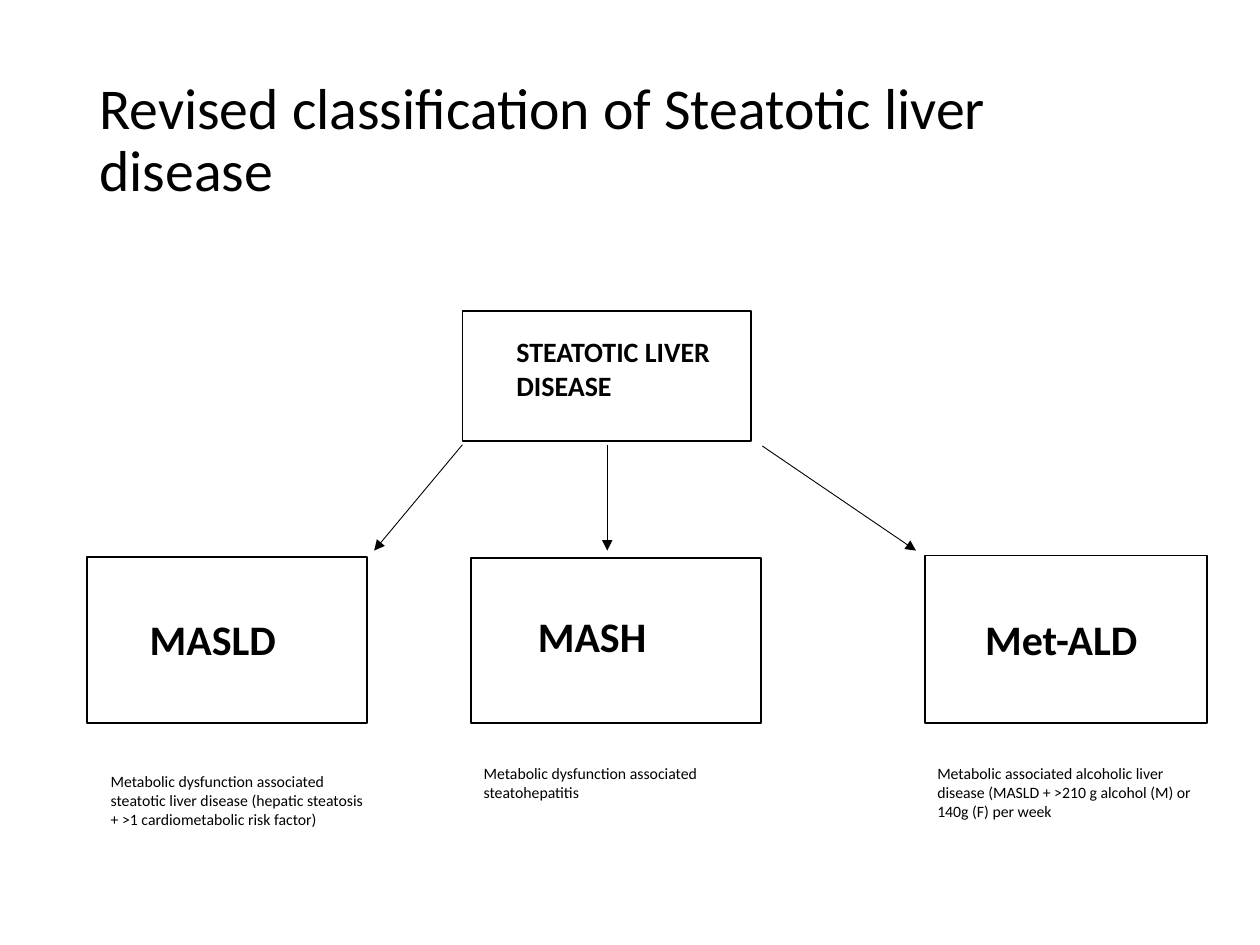
import pptx
import pptx.util
import pptx.dml.color
import pptx.enum.shapes
import pptx.enum.text
import pptx.oxml.ns
import lxml.etree

Inches = pptx.util.Inches
BLACK = pptx.dml.color.RGBColor(0, 0, 0)
WHITE = pptx.dml.color.RGBColor(255, 255, 255)
FONT = "Calibri"

# Box, label and description of each subtype: left, top, width, height
SUBTYPES = [
    ("MASLD", (0.69, 4.42, 2.22, 1.32), (1.09, 4.82, 1.66, 0.5),
     "Metabolic dysfunction associated steatotic liver disease "
     "(hepatic steatosis + >1 cardiometabolic risk factor)",
     (0.78, 6.08, 2.28, 0.56)),
    ("MASH", (3.74, 4.43, 2.3, 1.31), (4.17, 4.8, 1.54, 0.5),
     "Metabolic dysfunction associated steatohepatitis",
     (3.74, 6.01, 2.39, 0.4)),
    ("Met-ALD", (7.34, 4.41, 2.24, 1.33), (7.72, 4.82, 1.71, 0.5),
     "Metabolic associated alcoholic liver disease "
     "(MASLD + >210 g alcohol (M) or 140g (F) per week",
     (7.34, 6.01, 2.32, 0.56)),
]

# Start and end of each arrow
ARROWS = [
    ((4.82, 3.53), (4.82, 4.37)),
    ((3.67, 3.53), (2.97, 4.37)),
    ((6.05, 3.54), (7.27, 4.37)),
]


def add_box(slide, area):
    box = slide.shapes.add_shape(
        pptx.enum.shapes.MSO_SHAPE.RECTANGLE, *map(Inches, area))
    box.shadow.inherit = False
    box.fill.solid()
    box.fill.fore_color.rgb = WHITE
    box.line.color.rgb = BLACK
    box.line.width = pptx.util.Pt(1)


def add_text(slide, area, lines, size, bold=False):
    frame = slide.shapes.add_textbox(*map(Inches, area)).text_frame
    frame.word_wrap = True
    frame.text = "\n".join(lines)
    for paragraph in frame.paragraphs:
        paragraph.font.name = FONT
        paragraph.font.size = pptx.util.Pt(size)
        paragraph.font.bold = bold
        paragraph.font.color.rgb = BLACK
    return frame


def add_arrow(slide, start, end):
    arrow = slide.shapes.add_connector(
        pptx.enum.shapes.MSO_CONNECTOR.STRAIGHT, *map(Inches, start + end))
    arrow.line.color.rgb = BLACK
    arrow.line.width = pptx.util.Pt(0.5)
    qn = pptx.oxml.ns.qn
    lxml.etree.SubElement(
        arrow.line._get_or_add_ln(), qn("a:tailEnd"), type="triangle")
    lxml.etree.SubElement(arrow._element.spPr, qn("a:effectLst"))


def main():
    deck = pptx.Presentation()
    deck.slide_width, deck.slide_height = Inches(10), Inches(7.5)
    slide = deck.slides.add_slide(deck.slide_layouts[6])

    # Title
    title = add_text(slide, (0.69, 0.4, 8.62, 1.45),
                     ["Revised classification of Steatotic liver disease"], 33)
    title.vertical_anchor = pptx.enum.text.MSO_ANCHOR.MIDDLE
    title.paragraphs[0].line_spacing = 0.9

    # Parent disease
    add_box(slide, (3.67, 2.47, 2.29, 1.03))
    add_text(slide, (4, 2.61, 1.79, 0.64),
             ["STEATOTIC LIVER", "DISEASE"], 16, bold=True)

    # Subtypes
    for name, box_area, name_area, description, description_area in SUBTYPES:
        add_box(slide, box_area)
        add_text(slide, name_area, [name], 24, bold=True)
        add_text(slide, description_area, [description], 9)

    # Arrows from parent to subtypes
    for start, end in ARROWS:
        add_arrow(slide, start, end)

    deck.save("out.pptx")


if __name__ == "__main__":
    main()
